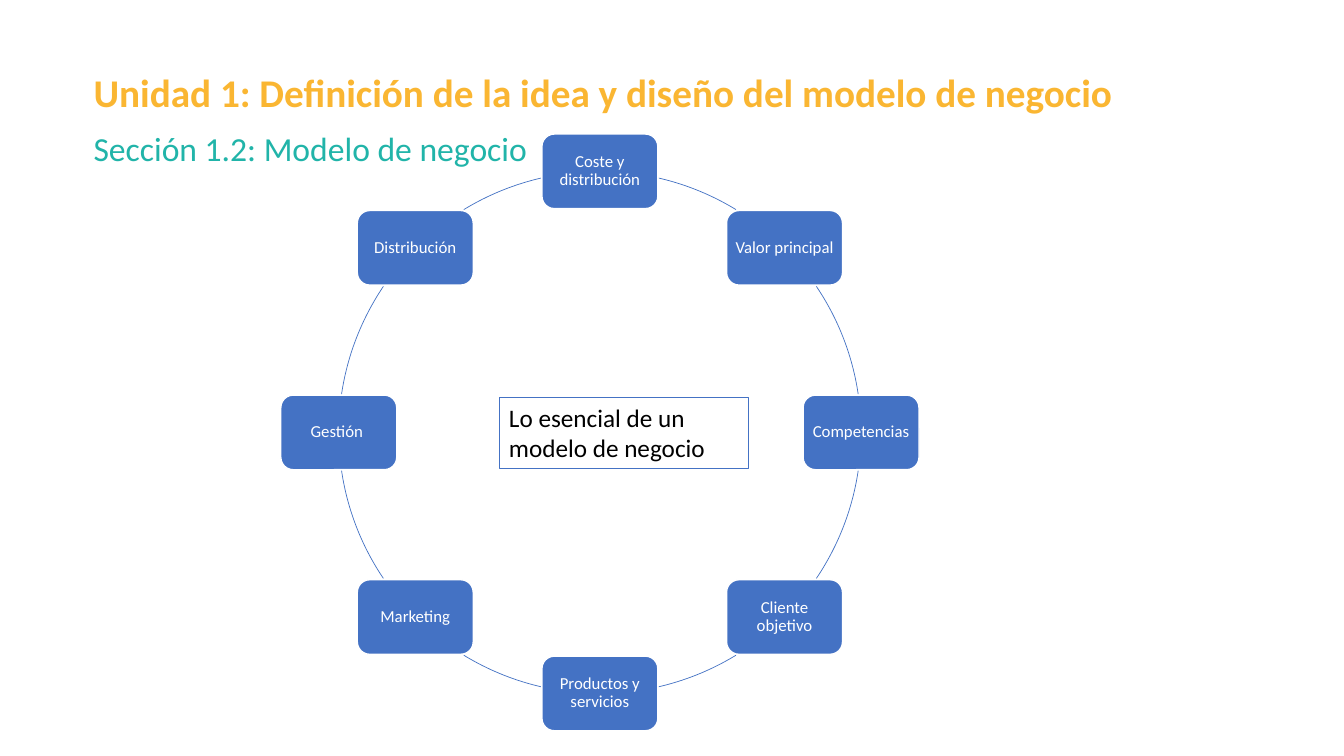
import math
from pptx import Presentation
from pptx import util as u
from pptx.dml.color import RGBColor
from pptx.enum import shapes, text

AMBER = RGBColor(0xFA, 0xB6, 0x32)
TEAL = RGBColor(0x21, 0xB4, 0xA9)
BLUE = RGBColor(0x44, 0x72, 0xC4)
WHITE = RGBColor(0xFF, 0xFF, 0xFF)
BLACK = RGBColor(0, 0, 0)

WIDTH, HEIGHT = 13.33, 7.5
NODE_WIDTH, NODE_HEIGHT = 1.15, 0.74
QUADRANT_ARCS = [(8.4, 34), (58.6, 77)]
TOPICS = [
    "Coste y distribución", "Valor principal", "Competencias ", "Cliente objetivo",
    "Productos y servicios", "Marketing", "Gestión ", "Distribución",
]


def write(shape, words, size, color, bold=False, align=text.PP_ALIGN.LEFT,
          anchor=text.MSO_ANCHOR.TOP, inset=None, spacing=None):
    frame = shape.text_frame
    frame.word_wrap = True
    frame.vertical_anchor = anchor
    if inset is not None:
        frame.margin_left = frame.margin_right = u.Inches(inset)
        frame.margin_top = frame.margin_bottom = u.Inches(inset)
    para = frame.paragraphs[0]
    para.alignment = align
    para.line_spacing = spacing
    span = para.add_run()
    span.text = words
    span.font.name = "Calibri"
    span.font.size = u.Pt(size)
    span.font.bold = bold
    span.font.color.rgb = color


def add_outlined(page, kind, box, line, weight, fill=None):
    shape = page.shapes.add_shape(kind, *map(u.Inches, box))
    shape.shadow.inherit = False
    if fill is None:
        shape.fill.background()
    else:
        shape.fill.solid()
        shape.fill.fore_color.rgb = fill
    shape.line.color.rgb = line
    shape.line.width = u.Pt(weight)
    return shape


def draw_heading(page, box):
    left, top, width, height = box
    title = page.shapes.add_textbox(*map(u.Inches, (left, top, width, height / 2)))
    write(title, "Unidad 1: Definición de la idea y diseño del modelo de negocio",
          28, AMBER, bold=True)
    section = page.shapes.add_textbox(
        *map(u.Inches, (left, top + height * 0.54, width * 0.71, height * 0.46)))
    write(section, "Sección 1.2: Modelo de negocio", 24, TEAL)


def draw_cycle(page, box):
    left, top, diameter, _ = box
    radius = diameter / 2
    center_x, center_y = left + radius, top + radius
    for base in (0, 180):
        for start, end in QUADRANT_ARCS:
            for first, last in ((base + start, base + end),
                                (base + 180 - end, base + 180 - start)):
                arc = add_outlined(page, shapes.MSO_SHAPE.ARC, box, BLUE, 0.5)
                arc.adjustments[0] = first * 0.6
                arc.adjustments[1] = last * 0.6
    for index, topic in enumerate(TOPICS):
        angle = math.tau * index / len(TOPICS)
        node_box = (center_x + radius * math.sin(angle) - NODE_WIDTH / 2,
                    center_y - radius * math.cos(angle) - NODE_HEIGHT / 2,
                    NODE_WIDTH, NODE_HEIGHT)
        node = add_outlined(page, shapes.MSO_SHAPE.ROUNDED_RECTANGLE,
                            node_box, WHITE, 1, fill=BLUE)
        write(node, topic, 12, WHITE, align=text.PP_ALIGN.CENTER,
              anchor=text.MSO_ANCHOR.MIDDLE, inset=0.05, spacing=0.9)


def draw_core(page, box):
    core = add_outlined(page, shapes.MSO_SHAPE.RECTANGLE, box, BLUE, 0.75)
    write(core, "Lo esencial de un modelo de negocio", 18, BLACK)


def main():
    deck = Presentation()
    deck.slide_width, deck.slide_height = u.Inches(WIDTH), u.Inches(HEIGHT)
    page = deck.slides.add_slide(deck.slide_layouts[6])
    draw_cycle(page, (3.36, 1.7, 5.18, 5.18))
    draw_core(page, (4.95, 3.94, 2.47, 0.71))
    draw_heading(page, (0.83, 0.63, 11.82, 1.09))
    deck.save("out.pptx")


if __name__ == "__main__":
    main()
